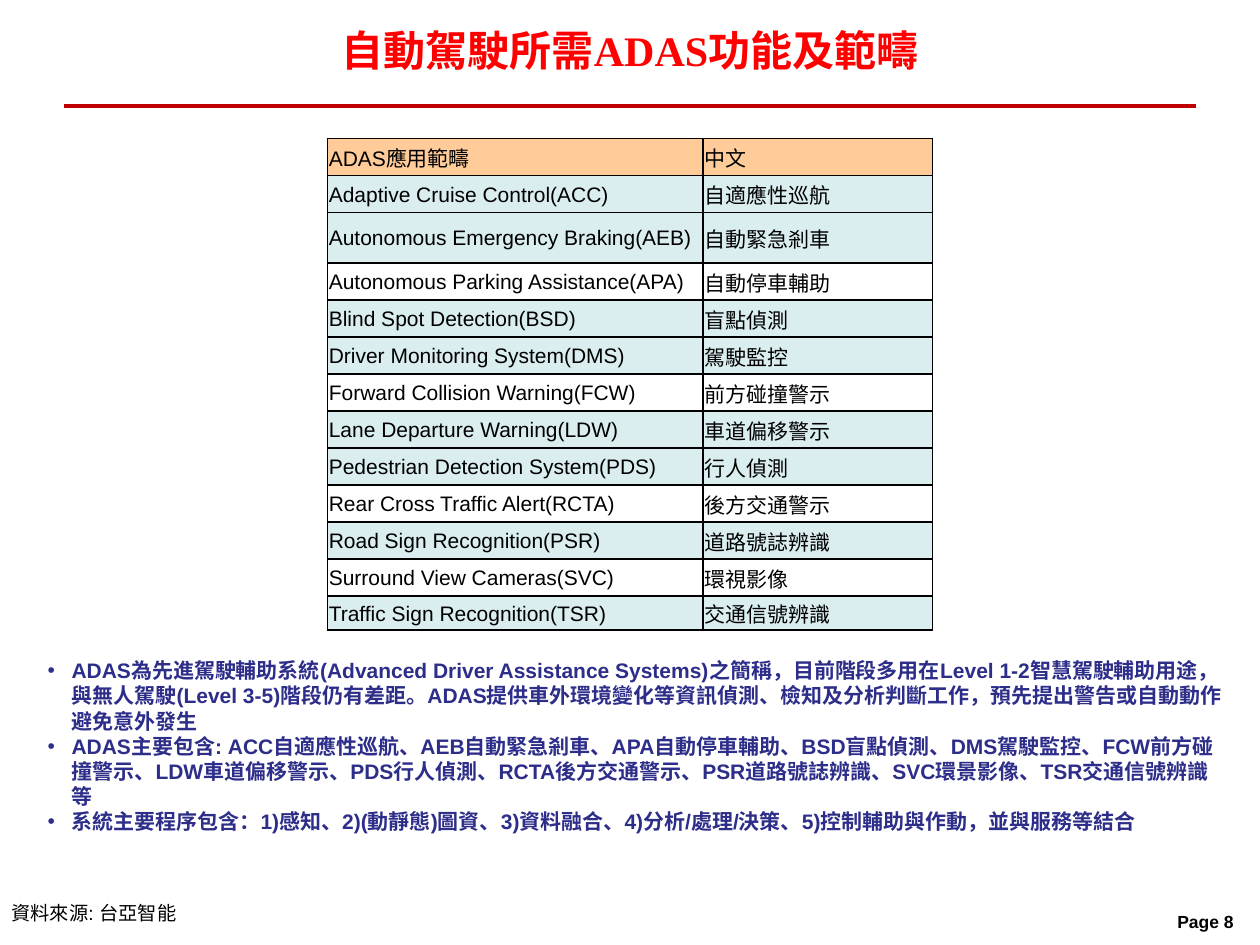
import pptx
import pptx.dml.color
import pptx.enum.shapes
import pptx.enum.text
import pptx.oxml.ns
import pptx.util
from lxml import etree
from pptx.util import Inches

ALIGN = pptx.enum.text.PP_ALIGN
ANCHOR = pptx.enum.text.MSO_ANCHOR
BLACK = "000000"
TINT = "DAEDEF"

FUNCTIONS = [
    ("Adaptive Cruise Control(ACC)", "自適應性巡航", TINT),
    ("Autonomous Emergency Braking(AEB)", "自動緊急剎車", TINT),
    ("Autonomous Parking Assistance(APA)", "自動停車輔助", None),
    ("Blind Spot Detection(BSD)", "盲點偵測", TINT),
    ("Driver Monitoring System(DMS)", "駕駛監控", TINT),
    ("Forward Collision Warning(FCW)", "前方碰撞警示", None),
    ("Lane Departure Warning(LDW)", "車道偏移警示", TINT),
    ("Pedestrian Detection System(PDS)", "行人偵測", TINT),
    ("Rear Cross Traffic Alert(RCTA)", "後方交通警示", None),
    ("Road Sign Recognition(PSR)", "道路號誌辨識", TINT),
    ("Surround View Cameras(SVC)", "環視影像", None),
    ("Traffic Sign Recognition(TSR)", "交通信號辨識", TINT),
]
NOTES = [
    "ADAS為先進駕駛輔助系統(Advanced Driver Assistance Systems)之簡稱，目前階段多用在"
    "Level 1-2智慧駕駛輔助用途，與無人駕駛(Level 3-5)階段仍有差距。ADAS提供車外環境變化等"
    "資訊偵測、檢知及分析判斷工作，預先提出警告或自動動作避免意外發生",
    "ADAS主要包含: ACC自適應性巡航、AEB自動緊急剎車、APA自動停車輔助、BSD盲點偵測、"
    "DMS駕駛監控、FCW前方碰撞警示、LDW車道偏移警示、PDS行人偵測、RCTA後方交通警示、"
    "PSR道路號誌辨識、SVC環景影像、TSR交通信號辨識等",
    "系統主要程序包含：1)感知、2)(動靜態)圖資、3)資料融合、4)分析/處理/決策、"
    "5)控制輔助與作動，並與服務等結合",
]


def rgb(value):
    return pptx.dml.color.RGBColor.from_string(value)


def add_element(parent, tag, **attributes):
    return etree.SubElement(parent, pptx.oxml.ns.qn(tag), attributes)


def set_font(para, size, color, bold=False, name="Arial"):
    para.font.name = name
    para.font.size = pptx.util.Pt(size)
    para.font.bold = bold
    para.font.color.rgb = rgb(color)


def add_text(page, left, top, width, height, text):
    """Add a wrapping text box and return its text frame."""
    box = page.shapes.add_textbox(Inches(left), Inches(top), Inches(width), Inches(height))
    frame = box.text_frame
    frame.word_wrap = True
    frame.text = text
    return frame


def add_title(page, left, top, width, height):
    frame = add_text(page, left, top, width, height, "自動駕駛所需ADAS功能及範疇")
    frame.vertical_anchor = ANCHOR.MIDDLE
    para = frame.paragraphs[0]
    para.alignment = ALIGN.CENTER
    set_font(para, 24, "FF0000", bold=True, name="Times New Roman")


def add_rule(page, left, top, width):
    y = Inches(top)
    rule = page.shapes.add_connector(
        pptx.enum.shapes.MSO_CONNECTOR.STRAIGHT, Inches(left), y, Inches(left + width), y)
    rule.line.color.rgb = rgb("C00000")
    rule.line.width = pptx.util.Pt(2.5)
    add_element(rule.element.spPr, "a:effectLst")


def set_borders(cell):
    properties = cell._tc.get_or_add_tcPr()
    for position, side in enumerate(("a:lnL", "a:lnR", "a:lnT", "a:lnB")):
        line = add_element(properties, side, w=str(pptx.util.Pt(1)))
        add_element(add_element(line, "a:solidFill"), "a:srgbClr", val=BLACK)
        properties.insert(position, line)


def fill_cell(cell, text, fill):
    cell.margin_left = cell.margin_right = cell.margin_top = Inches(0.01)
    cell.margin_bottom = 0
    cell.vertical_anchor = ANCHOR.MIDDLE
    cell.text = text
    set_font(cell.text_frame.paragraphs[0], 12, BLACK)
    if fill:
        cell.fill.solid()
        cell.fill.fore_color.rgb = rgb(fill)
    else:
        cell.fill.background()
    set_borders(cell)


def add_function_table(page, left, top, width, height):
    entries = [("ADAS應用範疇", "中文", "FFCC99")] + FUNCTIONS
    table = page.shapes.add_table(
        len(entries), 2, Inches(left), Inches(top), Inches(width), Inches(height)).table
    table.horz_banding = table.first_row = False
    table.columns[0].width = Inches(2.98)
    table.columns[1].width = Inches(width - 2.98)
    special_heights = {2: 0.4, len(entries) - 1: 0.27}
    for index, (english, chinese, fill) in enumerate(entries):
        table.rows[index].height = Inches(special_heights.get(index, 0.294))
        fill_cell(table.cell(index, 0), english, fill)
        fill_cell(table.cell(index, 1), chinese, fill)


def add_notes(page, left, top, width, height):
    frame = add_text(page, left, top, width, height, "\n".join(NOTES))
    indent = Inches(0.19)
    for para in frame.paragraphs:
        properties = para._p.get_or_add_pPr()
        properties.set("marL", str(indent))
        properties.set("indent", str(-indent))
        add_element(properties, "a:buFont", typeface="Arial")
        add_element(properties, "a:buChar", char="•")
        set_font(para, 12, "2D2D8A", bold=True)


def add_source(page, left, top, width, height):
    frame = add_text(page, left, top, width, height, "資料來源: 台亞智能")
    set_font(frame.paragraphs[0], 11, BLACK)


def add_page_number(page, left, top, width, height):
    frame = add_text(page, left, top, width, height, "Page 8")
    frame.margin_right = Inches(0.17)
    para = frame.paragraphs[0]
    para.alignment = ALIGN.RIGHT
    set_font(para, 10, BLACK, bold=True)


def main():
    deck = pptx.Presentation()
    deck.slide_width, deck.slide_height = Inches(10), Inches(7.5)
    page = deck.slides.add_slide(deck.slide_layouts[6])
    add_page_number(page, 7.52, 7.18, 2.44, 0.27)
    add_rule(page, 0.51, 0.84, 8.98)
    add_title(page, 0.51, 0.05, 8.98, 0.69)
    add_function_table(page, 2.6, 1.1, 4.8, 3.91)
    add_notes(page, 0.28, 5.17, 9.53, 1.31)
    add_source(page, -0.01, 7.1, 1.52, 0.29)
    deck.save("out.pptx")


if __name__ == "__main__":
    main()
